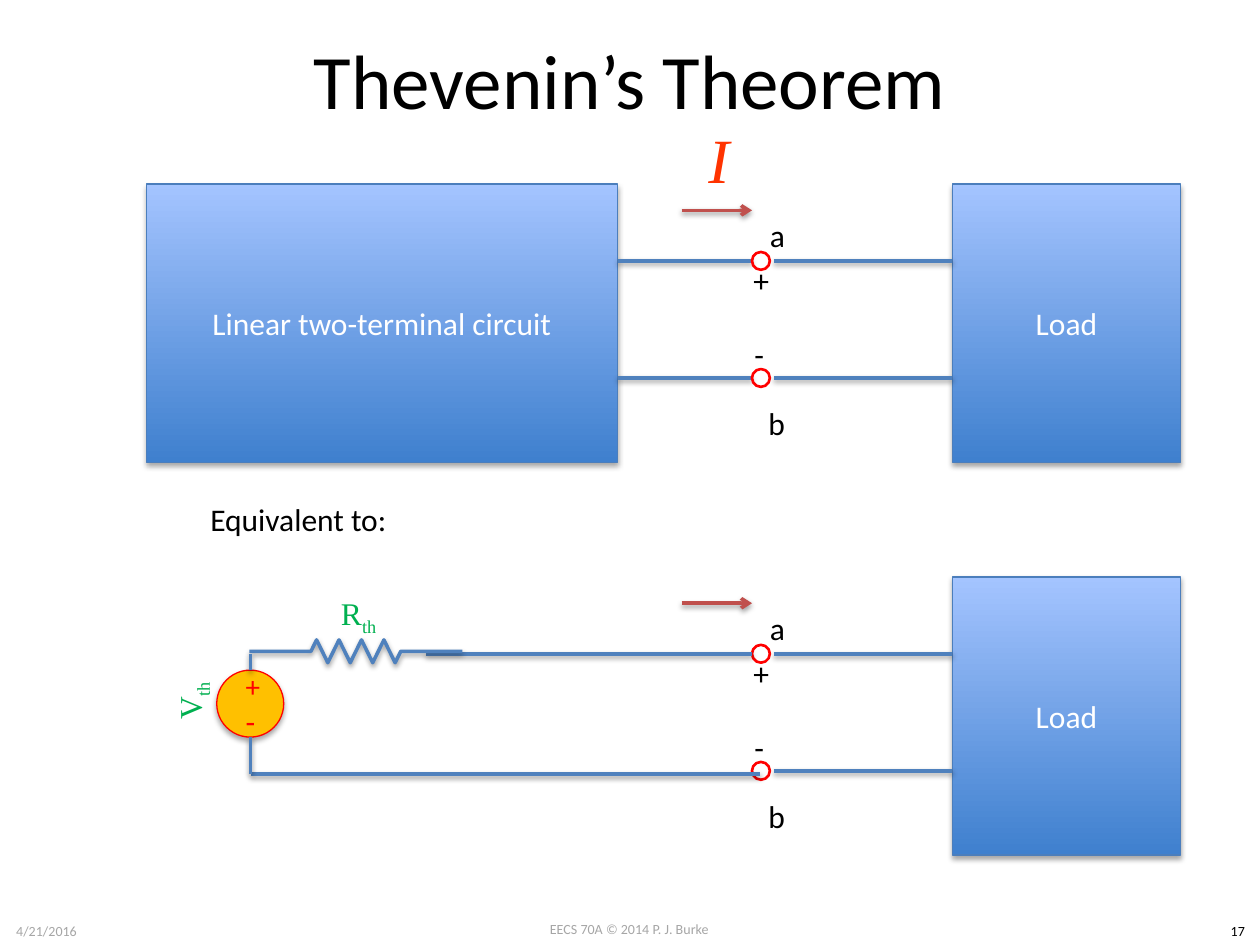
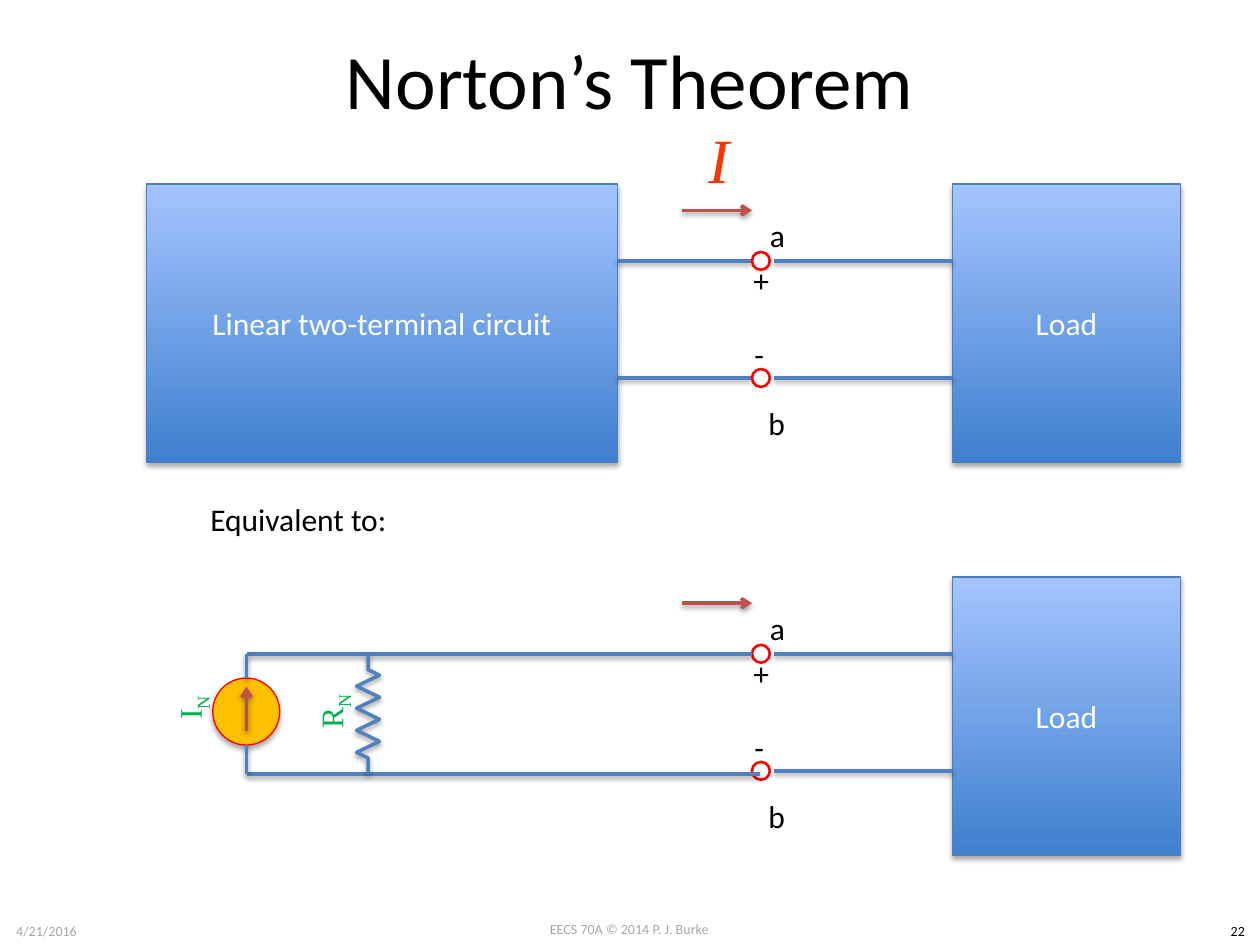
from lxml.etree import SubElement
from pptx import Presentation
from pptx.dml.color import RGBColor
from pptx.enum.shapes import MSO_CONNECTOR as Connector, MSO_SHAPE as Shape
from pptx.enum.text import MSO_ANCHOR as Anchor, PP_ALIGN as Align
from pptx.oxml.ns import qn
from pptx.util import Cm, Pt

COLORS = {
    "text": "000000",
    "footer": "A6A6A6",
    "block_text": "FFFFFF",
    "block_dark": "3F80CE",
    "block_light": "A4C4FF",
    "block_edge": "4B7EBC",
    "wire": "4F81BD",
    "arrow": "C0504D",
    "current": "FF3300",
    "terminal": "FF0000",
    "source": "FFC000",
    "quantity": "00B050",
}
SANS, SERIF = "Calibri", "Times New Roman"

# Lengths in centimetres
LOAD_LEFT, LOAD_WIDTH, BLOCK_HEIGHT = 19.2, 4.6, 5.61
CIRCUIT_LEFT, CIRCUIT_WIDTH = 2.95, 9.5
TOP_ROW, BOTTOM_ROW = 3.71, 11.63
UPPER_WIRE, LOWER_WIRE = 1.55, 3.91  # below the top of a row
TERMINAL_LEFT, TERMINAL_SIZE = 15.16, 0.36
RETURN_WIRE_Y, RETURN_WIRE_END = 15.6, 15.32
SOURCE_SIZE = 1.35
UPPER_Y = BOTTOM_ROW + UPPER_WIRE


def rgb(name):
    return RGBColor.from_string(COLORS[name])


def style_line(shape, color, width):
    shape.line.color.rgb = rgb(color)
    shape.line.width = Pt(width)


def add_shadow(shape, opacity, distance):
    """Cast a soft shadow straight down; call it after the line is set."""
    properties = shape._element.spPr
    effects = properties.find(qn("a:effectLst"))
    if effects is None:
        effects = SubElement(properties, qn("a:effectLst"))
    shadow = SubElement(effects, qn("a:outerShdw"), blurRad=str(Pt(3.1)),
                        dist=str(Pt(distance)), dir="5400000", rotWithShape="0")
    black = SubElement(shadow, qn("a:srgbClr"), val="000000")
    SubElement(black, qn("a:alpha"), val=str(opacity * 1000))


def format_run(run, size, color, font=SANS, italic=False):
    run.font.size = Pt(size)
    run.font.name = font
    run.font.italic = italic
    run.font.color.rgb = rgb(color)


def add_text(slide, text, left, top, width, height, size=18, color="text",
             font=SANS, italic=False, align=Align.CENTER, anchor=Anchor.MIDDLE,
             wrap=True):
    box = slide.shapes.add_textbox(Cm(left), Cm(top), Cm(width), Cm(height))
    frame = box.text_frame
    frame.text = text
    frame.word_wrap = wrap
    frame.vertical_anchor = anchor
    frame.paragraphs[0].alignment = align
    format_run(frame.paragraphs[0].runs[0], size, color, font, italic)
    return box


def add_label(slide, text, left, top, width=0.85):
    add_text(slide, text, left, top, width, 1.02, align=Align.LEFT,
             anchor=Anchor.TOP, wrap=False)


def add_quantity(slide, symbol, subscript, left, top, rotation=270):
    """Add a green symbol with its subscript, turned to read upwards by default."""
    box = add_text(slide, symbol, left, top, 3.02, 1.85, 18, "quantity", SERIF)
    box.rotation = rotation
    index = box.text_frame.paragraphs[0].add_run()
    index.text = subscript
    format_run(index, 18, "quantity", SERIF)
    index.font._element.set("baseline", "-25000")


def add_wire(slide, x1, y1, x2, y2, color="wire"):
    wire = slide.shapes.add_connector(Connector.STRAIGHT, Cm(x1), Cm(y1), Cm(x2), Cm(y2))
    style_line(wire, color, 2)
    add_shadow(wire, 38, 1.6)
    return wire


def add_arrow(slide, x1, y1, x2, y2):
    arrow = add_wire(slide, x1, y1, x2, y2, "arrow")
    SubElement(arrow._element.spPr.find(qn("a:ln")), qn("a:tailEnd"), type="arrow")


def add_block(slide, text, left, top, width):
    block = slide.shapes.add_shape(Shape.RECTANGLE, Cm(left), Cm(top), Cm(width),
                                   Cm(BLOCK_HEIGHT))
    block.fill.gradient()
    block.fill.gradient_angle = 90
    for stop, color in zip(block.fill.gradient_stops, ("block_dark", "block_light")):
        stop.color.rgb = rgb(color)
    style_line(block, "block_edge", 0.75)
    block.shadow.inherit = False
    add_shadow(block, 35, 1.8)
    frame = block.text_frame
    frame.text = text
    frame.vertical_anchor = Anchor.MIDDLE
    frame.paragraphs[0].alignment = Align.CENTER
    format_run(frame.paragraphs[0].runs[0], 18, "block_text")


def add_circle(slide, left, top, size, line_width):
    circle = slide.shapes.add_shape(Shape.OVAL, Cm(left), Cm(top), Cm(size), Cm(size))
    circle.fill.background()
    style_line(circle, "terminal", line_width)
    circle.shadow.inherit = False
    return circle


def add_source(slide, left, top):
    """Add a source circle and the wires from it to both rails."""
    source = add_circle(slide, left, top, SOURCE_SIZE, 0.75)
    source.fill.solid()
    source.fill.fore_color.rgb = rgb("source")
    add_shadow(source, 35, 1.8)
    center = left + SOURCE_SIZE / 2
    add_wire(slide, center, top, center, UPPER_Y)
    add_wire(slide, center, top + SOURCE_SIZE, center, RETURN_WIRE_Y)


def add_resistor(slide, x, y, length, lead, swing, vertical=False):
    """Draw a zigzag with a lead at each end; swing is the side of its first peak."""
    peaks = 8
    pitch = (length - 2 * lead) / peaks
    steps = [(0, 0), (lead, 0)]
    steps += [(lead + (i + 0.5) * pitch, swing * (-1) ** i) for i in range(peaks)]
    steps += [(length - lead, 0), (length, 0)]
    points = [(Cm(x + across), Cm(y + along)) if vertical
              else (Cm(x + along), Cm(y + across)) for along, across in steps]
    outline = slide.shapes.build_freeform(*points[0])
    outline.add_line_segments(points[1:], close=False)
    resistor = outline.convert_to_shape()
    resistor.fill.background()
    style_line(resistor, "wire", 2)
    resistor.shadow.inherit = False
    add_shadow(resistor, 38, 1.6)


def add_loaded_terminals(slide, top):
    """Add the load, its wires, terminals a and b, and the current arrow."""
    add_block(slide, "Load", LOAD_LEFT, top, LOAD_WIDTH)
    for offset in (UPPER_WIRE, LOWER_WIRE):
        y = top + offset
        add_circle(slide, TERMINAL_LEFT, y - TERMINAL_SIZE / 2, TERMINAL_SIZE, 1.5)
        add_wire(slide, 15.6, y, LOAD_LEFT, y)
    for text, left, offset in (("a", 15.27, 0.53), ("+", 14.94, 1.42),
                               ("-", 14.96, 2.92), ("b", 15.24, 4.32)):
        add_label(slide, text, left, top + offset)
    add_arrow(slide, 13.74, top + 0.53, TERMINAL_LEFT, top + 0.53)


def add_footer(slide, number):
    for text, left, top, width, color in (
            ("EECS 70A © 2014 P. J. Burke", 9.73, 18.44, 5.92, "footer"),
            ("4/21/2016", 0, 18.47, 1.88, "footer"),
            (number, 24.51, 18.47, 0.89, "text")):
        add_text(slide, text, left, top, width, 0.6, 8, color, anchor=Anchor.TOP)


def add_theorem_slide(deck, title, number):
    """Add what both theorems share: the general circuit and the loaded equivalent."""
    slide = deck.slides.add_slide(deck.slide_layouts[6])
    add_footer(slide, number)
    add_text(slide, title, 1.27, 0, 22.86, 3.18, 44)
    add_block(slide, "Linear two-terminal circuit", CIRCUIT_LEFT, TOP_ROW, CIRCUIT_WIDTH)
    for offset in (UPPER_WIRE, LOWER_WIRE):
        y = TOP_ROW + offset
        add_wire(slide, CIRCUIT_LEFT + CIRCUIT_WIDTH, y, TERMINAL_LEFT, y)
    add_text(slide, "I", 12.9, 1.9, 3.18, 2.57, 36, "current", SERIF, italic=True)
    add_label(slide, "Equivalent to:", 3.99, 9.96, 4.11)
    for top in (TOP_ROW, BOTTOM_ROW):
        add_loaded_terminals(slide, top)
    return slide


def add_rails(slide, upper_start, lower_start):
    add_wire(slide, upper_start, UPPER_Y, TERMINAL_LEFT, UPPER_Y)
    add_wire(slide, lower_start, RETURN_WIRE_Y, RETURN_WIRE_END, RETURN_WIRE_Y)


def add_thevenin_equivalent(slide):
    add_rails(slide, 8.59, 5.05)
    add_resistor(slide, 5.03, 13.13, 4.29, 1.24, -0.23)
    add_quantity(slide, "R", "th", 5.72, 11.48, rotation=0)
    add_source(slide, 4.37, 13.51)
    for sign, top, size in (("+", 13.41, 16.6), ("-", 14.12, 18)):
        add_text(slide, sign, 4.7, top, 0.66, 0.84, size, "terminal")
    add_quantity(slide, "V", "th", 2.36, 13.21)


def add_norton_equivalent(slide):
    add_rails(slide, 4.97, 4.97)
    add_resistor(slide, 7.42, UPPER_Y, RETURN_WIRE_Y - UPPER_Y, 0.32, 0.23, vertical=True)
    add_quantity(slide, "R", "N", 5.21, 13.41)
    add_source(slide, 4.29, 13.67)
    add_arrow(slide, 4.97, 14.73, 4.97, 13.84)
    add_quantity(slide, "I", "N", 2.36, 13.34)


def main():
    deck = Presentation()
    deck.slide_width, deck.slide_height = Cm(25.4), Cm(19.05)
    add_thevenin_equivalent(add_theorem_slide(deck, "Thevenin’s Theorem", "17"))
    add_norton_equivalent(add_theorem_slide(deck, "Norton’s Theorem", "22"))
    deck.save("out.pptx")


if __name__ == "__main__":
    main()
